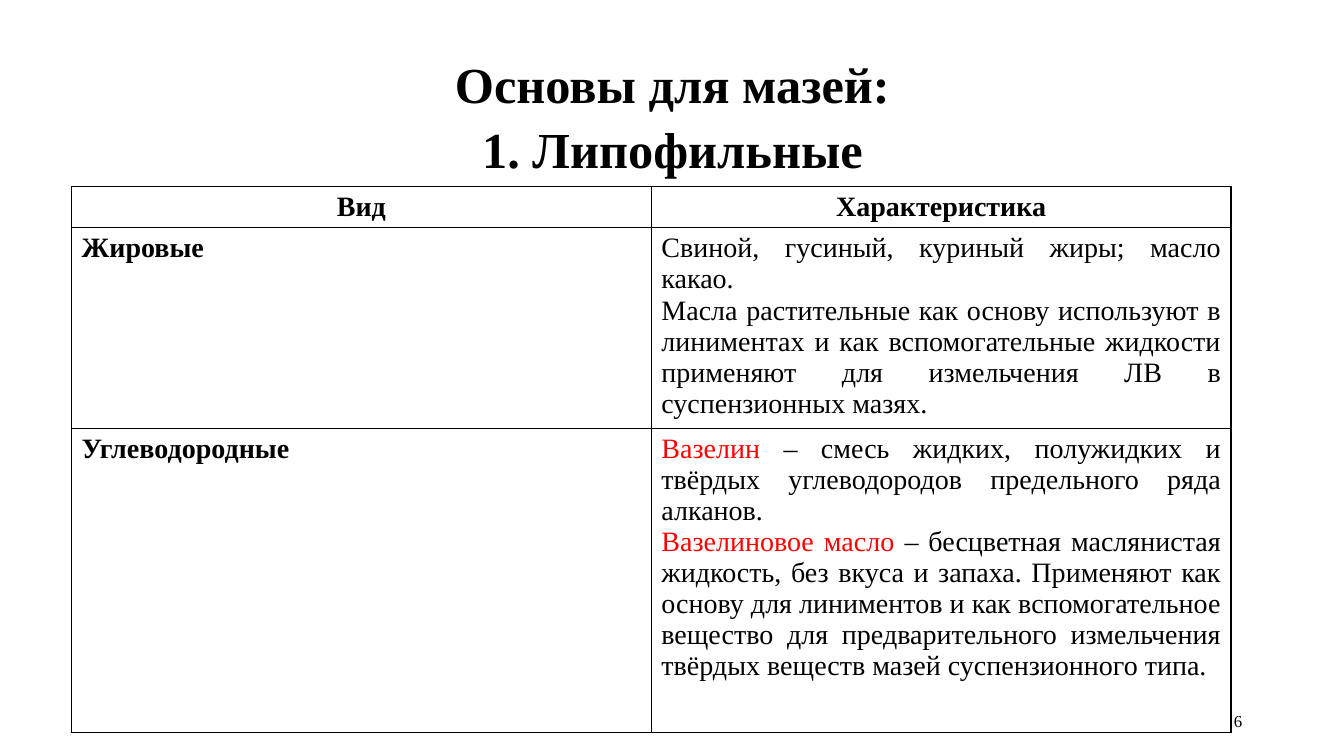
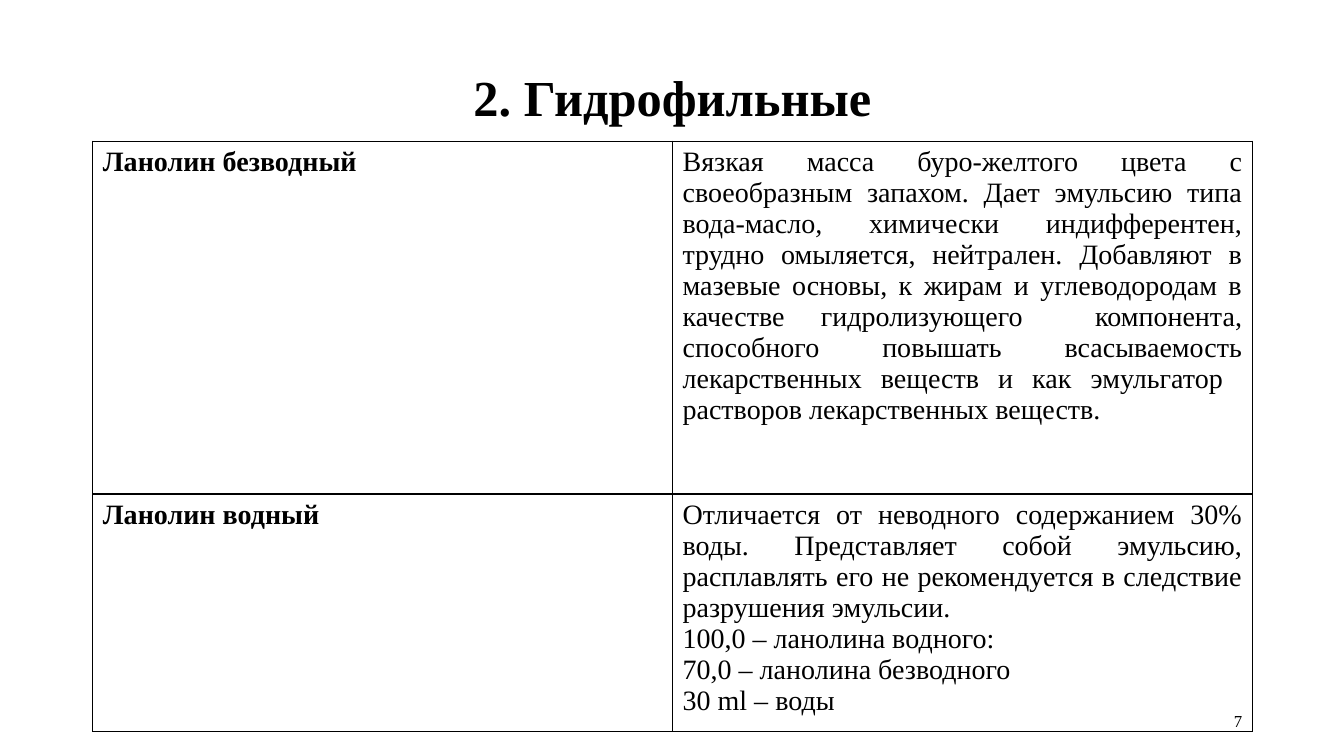
from dataclasses import dataclass

from lxml import etree
from pptx import Presentation
from pptx import util as u
from pptx.dml.color import RGBColor
from pptx.enum import text
from pptx.oxml import ns

COLORS = {"ink": "000000", "accent": "FF0000"}
FONT = "Times New Roman"
TITLE_SIZE, BODY_SIZE, NUMBER_SIZE = 36, 20, 12
CONTENT_WIDTH = 11.5
MARGIN = 0.92
TITLE_TOP = 0.4
TITLE_ONLY = 5
ALIGN = text.PP_ALIGN


@dataclass(frozen=True)
class Span:
    words: str
    color: str = "ink"
    italic: bool = False


Lines = list[list[Span]]


@dataclass(frozen=True)
class Row:
    height: float
    kind: str
    details: Lines
    header: bool = False


@dataclass(frozen=True)
class BasesSlide:
    number: int
    title: str
    title_height: float
    table_left: float
    table_top: float
    rows: list[Row]


def plain(*lines: str) -> Lines:
    return [[Span(line)] for line in lines]


SLIDES = [
    BasesSlide(6, "Основы для мазей:\n1. Липофильные", 1.45, 0.71, 1.85, [
        Row(0.41, "Вид", plain("Характеристика"), header=True),
        Row(1.99, "Жировые", plain(
            "Свиной, гусиный, куриный жиры; масло какао.",
            "Масла растительные как основу используют в линиментах и как "
            "вспомогательные жидкости применяют для измельчения ЛВ в "
            "суспензионных мазях.")),
        Row(3.02, "Углеводородные", [
            [Span("Вазелин", "accent"),
             Span(" – смесь жидких, полужидких и твёрдых углеводородов "
                  "предельного ряда алканов.")],
            [Span("Вазелиновое масло ", "accent"),
             Span("– бесцветная маслянистая жидкость, без вкуса и запаха. "
                  "Применяют как основу для линиментов и как вспомогательное "
                  "вещество для предварительного измельчения твёрдых веществ "
                  "мазей суспензионного типа.")]]),
    ]),
    BasesSlide(7, "2. Гидрофильные", 1.06, MARGIN, 1.4, [
        Row(3.5, "Ланолин безводный", [
            [Span("Вязкая масса буро-желтого цвета с своеобразным запахом. "
                  "Дает эмульсию типа вода-масло"),
             Span(", ", italic=True),
             Span("химически индифферентен, трудно омыляется, нейтрален. "
                  "Добавляют в мазевые основы, к жирам и углеводородам в "
                  "качестве гидролизующего  компонента, способного повышать "
                  "всасываемость лекарственных веществ и как эмульгатор  "
                  "растворов лекарственных веществ.")]]),
        Row(2.36, "Ланолин водный", plain(
            "Отличается от неводного содержанием 30% воды. Представляет собой "
            "эмульсию, расплавлять его не рекомендуется в следствие "
            "разрушения эмульсии.",
            "100,0 – ланолина водного:",
            "70,0 – ланолина безводного",
            "30 ml – воды")),
    ]),
]


def write(frame, lines: Lines, *, size: int, align: ALIGN,
          bold: bool = False, spacing: float = 1.0,
          anchor=text.MSO_ANCHOR.TOP) -> None:
    """Fill a text frame; a newline inside a span becomes a line break."""
    frame.word_wrap = True
    frame.vertical_anchor = anchor
    for index, line in enumerate(lines):
        paragraph = frame.add_paragraph() if index else frame.paragraphs[0]
        paragraph.alignment = align
        paragraph.line_spacing = spacing
        for span in line:
            for part_index, part in enumerate(span.words.split("\n")):
                if part_index:
                    paragraph.add_line_break()
                run = paragraph.add_run()
                run.text = part
                font = run.font
                font.name, font.size = FONT, u.Pt(size)
                font.bold, font.italic = bold, span.italic
                font.color.rgb = RGBColor.from_string(COLORS[span.color])


def outline(cell) -> None:
    """Draw a 1 pt border on all sides of an unfilled cell."""
    properties = cell._tc.get_or_add_tcPr()
    for side in ("lnL", "lnR", "lnT", "lnB"):
        line = etree.SubElement(properties, ns.qn(f"a:{side}"), w=str(u.Pt(1)))
        fill = etree.SubElement(line, ns.qn("a:solidFill"))
        etree.SubElement(fill, ns.qn("a:srgbClr"), val=COLORS["ink"])
    cell.fill.background()


def add_title(slide, content: BasesSlide) -> None:
    title = slide.shapes.title
    title.left, title.top = u.Inches(MARGIN), u.Inches(TITLE_TOP)
    title.width = u.Inches(CONTENT_WIDTH)
    title.height = u.Inches(content.title_height)
    title.text_frame.auto_size = text.MSO_AUTO_SIZE.NONE
    write(title.text_frame, plain(content.title), size=TITLE_SIZE, bold=True,
          align=ALIGN.CENTER, spacing=1.08, anchor=text.MSO_ANCHOR.MIDDLE)


def add_bases_table(slide, content: BasesSlide) -> None:
    rows = content.rows
    table = slide.shapes.add_table(
        len(rows), 2, u.Inches(content.table_left), u.Inches(content.table_top),
        u.Inches(CONTENT_WIDTH), u.Inches(sum(row.height for row in rows))).table
    table.first_row = table.horz_banding = False
    for index, row in enumerate(rows):
        table.rows[index].height = u.Inches(row.height)
        align = ALIGN.CENTER if row.header else ALIGN.JUSTIFY
        for column, lines in enumerate((plain(row.kind), row.details)):
            cell = table.cell(index, column)
            outline(cell)
            write(cell.text_frame, lines, size=BODY_SIZE, align=align,
                  bold=row.header or column == 0)


def add_page_number(slide, number: int) -> None:
    box = slide.shapes.add_textbox(
        u.Inches(9.42), u.Inches(6.95), u.Inches(3), u.Inches(0.4))
    write(box.text_frame, plain(str(number)), size=NUMBER_SIZE,
          align=ALIGN.RIGHT, anchor=text.MSO_ANCHOR.MIDDLE)


def main() -> None:
    deck = Presentation()
    deck.slide_width, deck.slide_height = u.Inches(13.33), u.Inches(7.5)
    title_style = deck.slide_master.element.xpath(
        ".//p:titleStyle/a:lvl1pPr/a:defRPr")[0]
    title_style.set("sz", str(TITLE_SIZE * 100))
    for content in SLIDES:
        slide = deck.slides.add_slide(deck.slide_layouts[TITLE_ONLY])
        add_title(slide, content)
        add_bases_table(slide, content)
        add_page_number(slide, content.number)
    deck.save("out.pptx")


if __name__ == "__main__":
    main()
